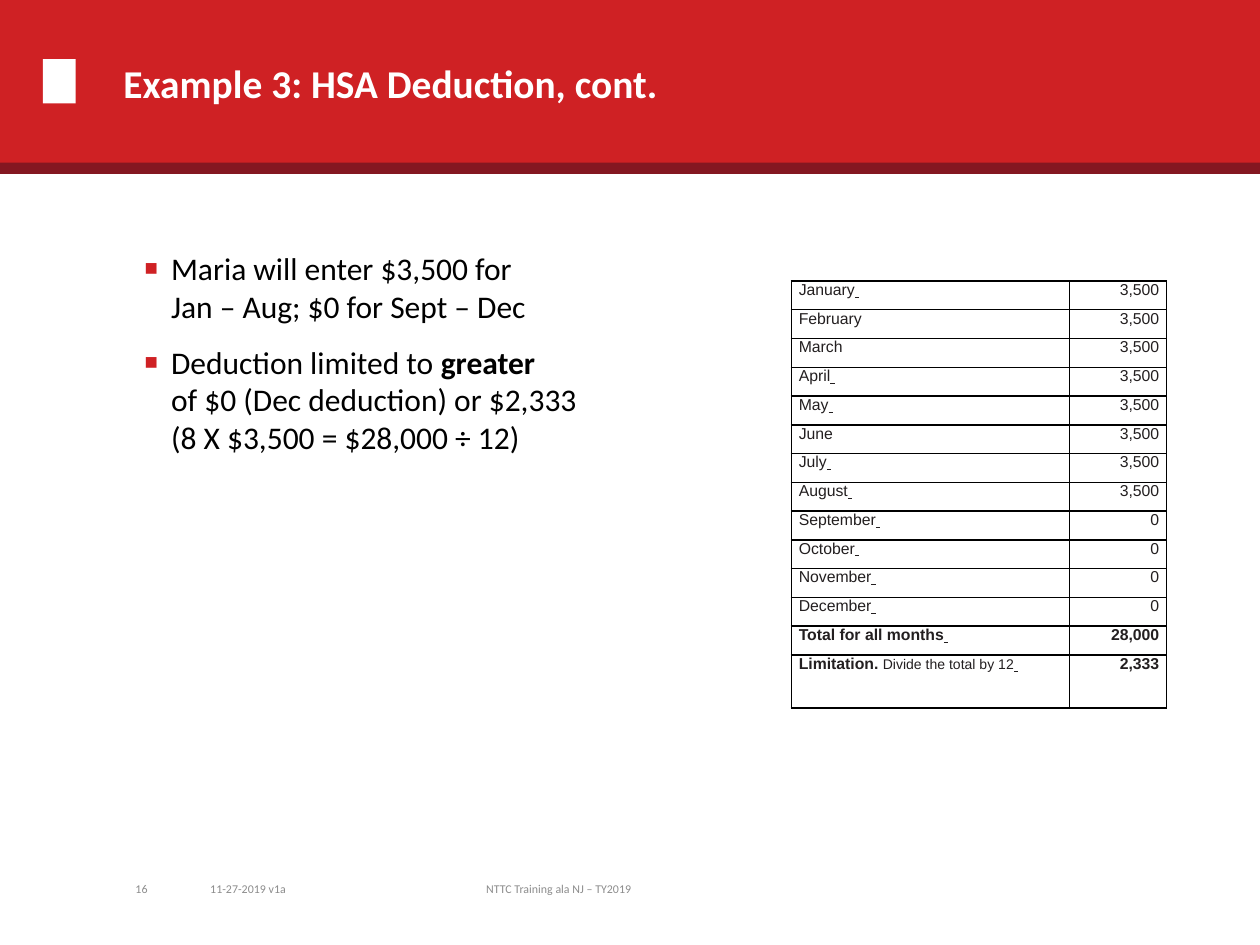
import dataclasses

import pptx
import pptx.dml.color
import pptx.enum.shapes
import pptx.enum.text
import pptx.oxml.ns
import pptx.util
from lxml import etree

Inches = pptx.util.Inches
Pt = pptx.util.Pt
ALIGN = pptx.enum.text.PP_ALIGN
ANCHOR = pptx.enum.text.MSO_ANCHOR
qn = pptx.oxml.ns.qn


@dataclasses.dataclass(frozen=True)
class Theme:
    """Colours, fonts and type sizes of the slide."""
    red: str = "CF2124"
    maroon: str = "841721"
    white: str = "FFFFFF"
    black: str = "000000"
    grey: str = "8C8C8C"
    ink: str = "231F20"
    sans: str = "Calibri"
    table_font: str = "Arial"
    title: float = 22.5
    body: float = 18
    cell: float = 9
    note: float = 8
    footer: float = 6.8
    bullet_gap: float = 10.1


T = Theme()
TITLE = {"name": T.sans, "size": Pt(T.title), "bold": True}
BODY = {"name": T.sans, "size": Pt(T.body)}
FOOTER = {"name": T.sans, "size": Pt(T.footer)}
CELL = {"name": T.table_font, "size": Pt(T.cell), "bold": False}
STRONG = {**CELL, "bold": True}
NOTE = {**CELL, "size": Pt(T.note)}
BLANK = {**CELL, "underline": True}

BULLETS = [
    [[("Maria will enter $3,500 for", False)],
     [("Jan – Aug; $0 for Sept – Dec", False)]],
    [[("Deduction limited to ", False), ("greater", True)],
     [("of $0 (Dec deduction) or $2,333", False)],
     [("(8 X $3,500 = $28,000 ÷ 12)", False)]],
]
MONTHS = ["January", "February", "March", "April", "May", "June", "July",
          "August", "September", "October", "November", "December"]
NO_BLANK = {"February", "March", "June"}
ROWS = [([(m, CELL)], ("3,500" if i < 8 else "0", CELL)) for i, m in enumerate(MONTHS)]
ROWS += [
    ([("Total for all months", STRONG)], ("28,000", STRONG)),
    ([("Limitation. ", STRONG), ("Divide the total by 12", NOTE)], ("2,333", STRONG)),
]


def rgb(color):
    """Return a colour object for a hex string."""
    return pptx.dml.color.RGBColor.from_string(color)


def set_all(target, values):
    """Set each attribute named in a dict of values."""
    for name, value in values.items():
        setattr(target, name, value)


def add_run(p, text, fmt, color):
    """Append a formatted run to a paragraph."""
    r = p.add_run()
    r.text = text
    set_all(r.font, fmt)
    r.font.color.rgb = rgb(color)


def add_box(s, box):
    """Add a wrapping text box and return its text frame."""
    tf = s.shapes.add_textbox(*map(Inches, box)).text_frame
    tf.word_wrap = True
    return tf


def add_bar(s, box, color):
    """Add a plain filled rectangle."""
    sp = s.shapes.add_shape(pptx.enum.shapes.MSO_SHAPE.RECTANGLE, *map(Inches, box))
    sp.shadow.inherit = False
    sp.fill.solid()
    sp.fill.fore_color.rgb = rgb(color)
    sp.line.fill.background()


def add_header(s, box, text):
    """Draw the banner with its marker and rule, and place the title on it."""
    x, y, w, h = box
    add_bar(s, box, T.red)
    add_bar(s, (x + 0.34, y + 0.48, 0.26, 0.35), T.white)
    add_bar(s, (x, y + h - 0.03, w, 0.09), T.maroon)
    sp = s.shapes.title
    set_all(sp, dict(zip(("left", "top", "width", "height"),
                         map(Inches, (x + 0.88, y + 0.04, 8, 1.25)))))
    tf = sp.text_frame
    tf.vertical_anchor = ANCHOR.MIDDLE
    p = tf.paragraphs[0]
    p.alignment = ALIGN.LEFT
    add_run(p, text, TITLE, T.white)
    s.shapes._spTree.append(sp._element)


def add_bullet(p):
    """Give a paragraph a hanging red square bullet."""
    pPr = p._p.get_or_add_pPr()
    pPr.set("marL", str(Inches(0.21)))
    pPr.set("indent", str(-Inches(0.21)))
    color = etree.SubElement(pPr, qn("a:buClr"))
    etree.SubElement(color, qn("a:srgbClr"), val=T.red)
    etree.SubElement(pPr, qn("a:buSzPct"), val="70000")
    etree.SubElement(pPr, qn("a:buFont"), typeface=T.table_font)
    etree.SubElement(pPr, qn("a:buChar"), char="■")


def add_body(s, box, bullets):
    """Write the bulleted paragraphs with their line breaks."""
    tf = add_box(s, box)
    for i, lines in enumerate(bullets):
        p = tf.add_paragraph() if i else tf.paragraphs[0]
        add_bullet(p)
        if i:
            p.space_before = Pt(T.bullet_gap)
        for j, line in enumerate(lines):
            if j:
                p.add_line_break()
            for text, bold in line:
                add_run(p, text, {**BODY, "bold": bold}, T.black)


def fill_cell(cell, runs, align):
    """Write runs into a bordered cell without fill."""
    set_all(cell, {"margin_left": Inches(0.06), "margin_right": Inches(0.06),
                   "margin_top": 0, "margin_bottom": 0})
    tcPr = cell._tc.get_or_add_tcPr()
    for side in "LRTB":
        ln = etree.SubElement(tcPr, qn(f"a:ln{side}"), w=str(Pt(1)))
        fill = etree.SubElement(ln, qn("a:solidFill"))
        etree.SubElement(fill, qn("a:srgbClr"), val=T.black)
    cell.fill.background()
    p = cell.text_frame.paragraphs[0]
    p.alignment = align
    for text, fmt in runs:
        add_run(p, text, fmt, T.ink)


def add_months(s, box, rows, last_height=0.42):
    """Build the table of monthly limits with a taller last row."""
    x, y, w, h = box
    table = s.shapes.add_table(len(rows), 2, *map(Inches, box)).table
    set_all(table, {"first_row": False, "horz_banding": False})
    for column, width in zip(table.columns, (w - 0.77, 0.77)):
        column.width = Inches(width)
    for i, (label, value) in enumerate(rows):
        last = i == len(rows) - 1
        table.rows[i].height = Inches(last_height if last else (h - last_height) / (len(rows) - 1))
        blank = [] if label[0][0] in NO_BLANK else [(" ", BLANK)]
        fill_cell(table.cell(i, 0), label + blank, ALIGN.LEFT)
        fill_cell(table.cell(i, 1), [value], ALIGN.RIGHT)


def add_footer(s, box):
    """Write the page number, version and course name along the bottom."""
    x, y, w, h = box
    for dx, width, text, align in (
            (0, 0.77, "16", ALIGN.RIGHT),
            (1.07, 1.09, "11-27-2019 v1a", ALIGN.LEFT),
            (2.35, 3.17, "NTTC Training ala NJ – TY2019", ALIGN.CENTER)):
        tf = add_box(s, (x + dx, y, width, h))
        tf.vertical_anchor = ANCHOR.MIDDLE
        p = tf.paragraphs[0]
        p.alignment = align
        add_run(p, text, FOOTER, T.grey)


def main():
    """Build the slide and save it."""
    prs = pptx.Presentation()
    set_all(prs, {"slide_width": Inches(10), "slide_height": Inches(7.5)})
    s = prs.slides.add_slide(prs.slide_layouts[5])
    add_header(s, (0, -0.01, 10, 1.33), "Example 3: HSA Deduction, cont.")
    add_body(s, (1.05, 1.93, 8, 4.4), BULLETS)
    add_months(s, (6.28, 2.23, 2.98, 3.39), ROWS)
    add_footer(s, (0.5, 6.85, 5.52, 0.4))
    prs.save("out.pptx")


if __name__ == "__main__":
    main()
